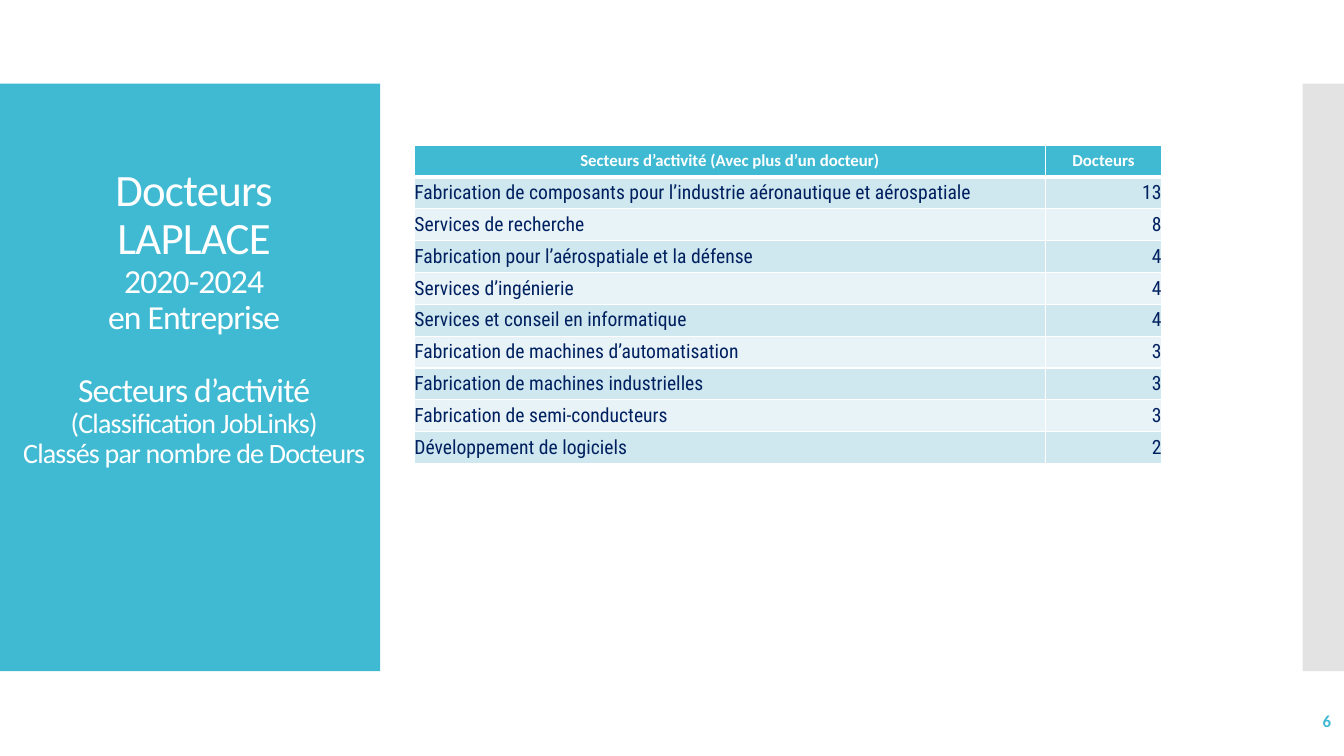
import pptx
import pptx.util
import pptx.dml.color
import pptx.enum.shapes
import pptx.enum.text
import pptx.oxml.ns
from lxml import etree

Inches = pptx.util.Inches
Pt = pptx.util.Pt
Align = pptx.enum.text.PP_ALIGN
Anchor = pptx.enum.text.MSO_ANCHOR
qn = pptx.oxml.ns.qn

HUES = {"teal": "40BAD2", "grey": "C8C8C8", "white": "FFFFFF",
        "navy": "002060", "dark": "CFE7EE", "light": "E8F3F7"}

# Title lines: text, size, space before
TITLE = [("Docteurs", 32, 0), ("LAPLACE", 32, 0),
         ("2020-2024", 24, 0), ("en Entreprise", 24, 0),
         ("Secteurs d’activité", 24, 26),
         ("(Classification JobLinks)", 20, 0),
         ("Classés par nombre de Docteurs", 20, 0)]

HEAD = ("Secteurs d’activité (Avec plus d’un docteur)", "Docteurs")
ROWS = [
    ("Fabrication de composants pour l’industrie aéronautique et aérospatiale", 13),
    ("Services de recherche", 8),
    ("Fabrication pour l’aérospatiale et la défense", 4),
    ("Services d’ingénierie", 4),
    ("Services et conseil en informatique", 4),
    ("Fabrication de machines d’automatisation", 3),
    ("Fabrication de machines industrielles", 3),
    ("Fabrication de semi-conducteurs", 3),
    ("Développement de logiciels", 2),
]


def hue(name):
    return pptx.dml.color.RGBColor.from_string(HUES[name])


def write(para, text, size, color, align, face="Calibri", bold=False):
    para.text = text
    para.alignment = align
    font = para.runs[0].font
    font.size, font.name, font.bold = Pt(size), face, bold
    font.color.rgb = hue(color)


def add_bar(slide, box, color, alpha=None):
    bar = slide.shapes.add_shape(
        pptx.enum.shapes.MSO_SHAPE.RECTANGLE, *map(Inches, box))
    bar.shadow.inherit = False
    bar.fill.solid()
    bar.fill.fore_color.rgb = hue(color)
    bar.line.fill.background()
    if alpha:
        tint = bar.fill._xPr.find(".//" + qn("a:srgbClr"))
        etree.SubElement(tint, qn("a:alpha"), val=str(alpha * 1000))


def add_text(slide, box, anchor):
    frame = slide.shapes.add_textbox(*map(Inches, box)).text_frame
    frame.word_wrap = True
    frame.vertical_anchor = anchor
    return frame


def add_title(slide, box):
    frame = add_text(slide, box, Anchor.TOP)
    frame.margin_top = 0
    for i, (text, size, gap) in enumerate(TITLE):
        para = frame.add_paragraph() if i else frame.paragraphs[0]
        write(para, text, size, "white", Align.CENTER)
        para.line_spacing = 0.9
        para.space_before = Pt(gap)
        para.runs[0].font._element.set("spc", "-60")


def add_edges(cell, base):
    props = cell._tc.get_or_add_tcPr()
    widths = {"lnL": 1, "lnR": 1, "lnT": 1, "lnB": base}
    for i, (tag, width) in enumerate(widths.items()):
        line = etree.Element(qn("a:" + tag), w=str(Pt(width)))
        fill = etree.SubElement(line, qn("a:solidFill"))
        etree.SubElement(fill, qn("a:srgbClr"), val=HUES["white"])
        props.insert(i, line)


def add_grid(slide, box):
    left, top, width, height = box
    grid = slide.shapes.add_table(
        len(ROWS) + 1, 2, *map(Inches, box)).table
    grid.columns[0].width = Inches(6.26)
    grid.columns[1].width = Inches(width - 6.26)
    for row in grid.rows:
        row.height = Inches(height / (len(ROWS) + 1))
    for r, row in enumerate([HEAD] + ROWS):
        for c, value in enumerate(row):
            cell = grid.cell(r, c)
            para = cell.text_frame.paragraphs[0]
            cell.fill.solid()
            if r == 0:
                cell.fill.fore_color.rgb = hue("teal")
                write(para, value, 12, "white", Align.CENTER, bold=True)
            else:
                cell.fill.fore_color.rgb = hue("dark" if r % 2 else "light")
                cell.vertical_anchor = Anchor.MIDDLE
                cell.margin_left = cell.margin_right = 0
                cell.margin_top = cell.margin_bottom = 0
                write(para, str(value), 14, "navy",
                      Align.RIGHT if c else Align.LEFT, "Roboto Condensed")
            add_edges(cell, 1 if r else 3)


def add_number(slide, box):
    frame = add_text(slide, box, Anchor.MIDDLE)
    write(frame.paragraphs[0], "6", 12, "teal", Align.RIGHT, bold=True)


def main():
    deck = pptx.Presentation()
    deck.slide_width, deck.slide_height = Inches(13.33), Inches(7.5)
    slide = deck.slides.add_slide(deck.slide_layouts[6])
    # Side bars
    add_bar(slide, (0, 0.83, 3.77, 5.83), "teal")
    add_bar(slide, (12.92, 0.83, 0.41, 5.83), "grey", 50)
    # Title, table and page number
    add_title(slide, (0.11, 1.66, 3.63, 3.2))
    add_grid(slide, (4.11, 1.44, 7.41, 3.16))
    add_number(slide, (11.63, 6.95, 1.67, 0.4))
    deck.save("out.pptx")


if __name__ == "__main__":
    main()
